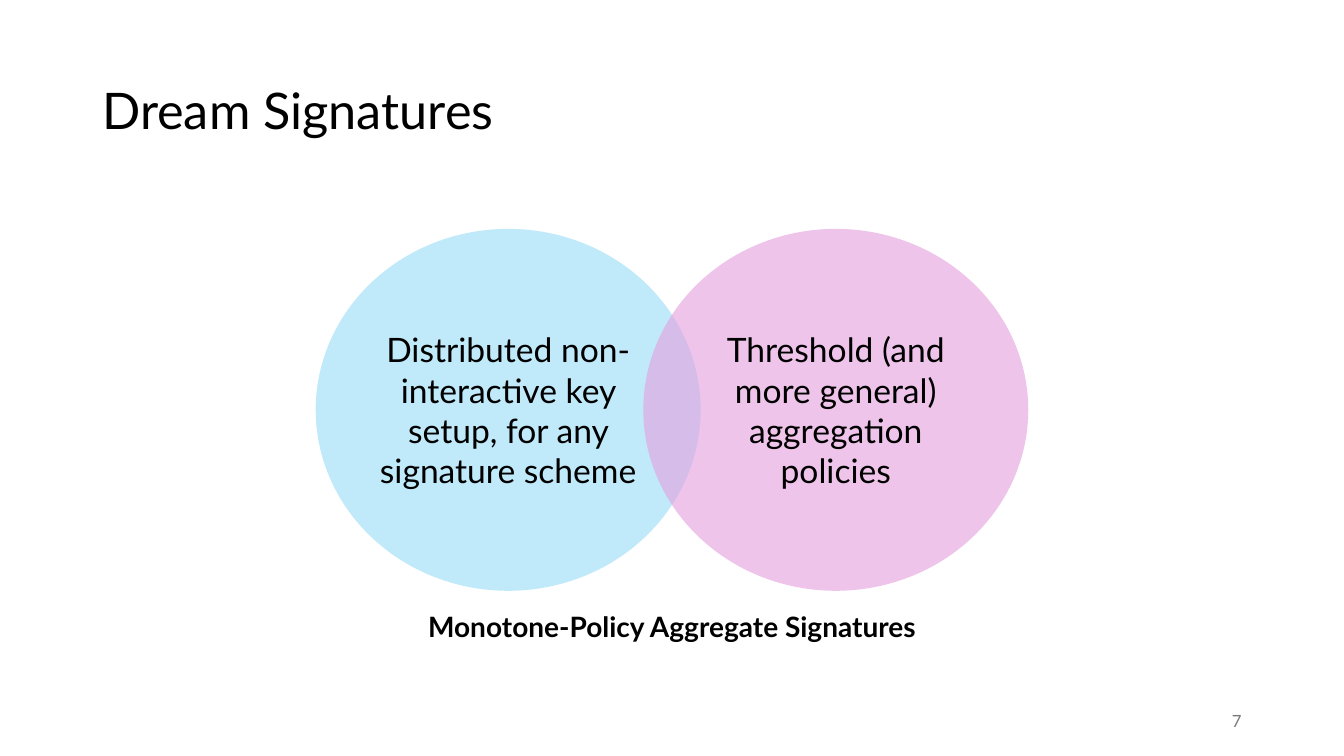
from lxml.etree import SubElement
from pptx import Presentation
from pptx.dml.color import RGBColor
from pptx.enum.shapes import MSO_SHAPE
from pptx.enum.text import MSO_ANCHOR, PP_ALIGN
from pptx.oxml.ns import qn
from pptx.util import Pt

FONT = "Lato"
BLACK = RGBColor(0x00, 0x00, 0x00)
GREY = RGBColor(0x79, 0x79, 0x79)
SKY = RGBColor(0x96, 0xDC, 0xF8)
ORCHID = RGBColor(0xE5, 0x9E, 0xDD)

CIRCLE_WIDTH = 275
PROPERTIES = [
    ("Distributed non-interactive key setup, for any signature scheme", SKY),
    ("Threshold (and more general) aggregation policies", ORCHID),
]


def write(frame, text, size, color=BLACK, align=PP_ALIGN.LEFT,
          anchor=MSO_ANCHOR.MIDDLE, bold=False):
    frame.word_wrap = True
    frame.vertical_anchor = anchor
    paragraph = frame.paragraphs[0]
    paragraph.alignment = align
    run = paragraph.add_run()
    run.text = text
    run.font.name = FONT
    run.font.size = Pt(size)
    run.font.bold = bold
    run.font.color.rgb = color
    return paragraph


def add_label(slide, box, text, size, **style):
    label = slide.shapes.add_textbox(*map(Pt, box))
    return write(label.text_frame, text, size, **style)


def add_title(slide, box, text):
    add_label(slide, box, text, 36).line_spacing = 0.9


def add_circle(slide, box, text, color):
    circle = slide.shapes.add_shape(MSO_SHAPE.OVAL, *map(Pt, box))
    circle.shadow.inherit = False
    circle.line.fill.background()
    circle.fill.solid()
    circle.fill.fore_color.rgb = color
    tint = circle.fill._xPr.find(qn("a:solidFill"))[0]
    SubElement(tint, qn("a:alpha"), val="60000")
    frame = circle.text_frame
    frame.margin_left = frame.margin_right = 0
    write(frame, text, 24, align=PP_ALIGN.CENTER)


def add_venn(slide, box):
    """Spread overlapping circles evenly from the left to the right edge."""
    left, top, width, height = box
    step = (width - CIRCLE_WIDTH) / (len(PROPERTIES) - 1)
    for index, (text, color) in enumerate(PROPERTIES):
        add_circle(slide, (left + index * step, top, CIRCLE_WIDTH, height),
                   text, color)


def main():
    presentation = Presentation()
    presentation.slide_width = Pt(960)
    presentation.slide_height = Pt(540)
    slide = presentation.slides.add_slide(presentation.slide_layouts[6])
    add_title(slide, (66, 28.75, 828, 104.4), "Dream Signatures")
    add_label(slide, (678, 500.5, 216, 28.75), "7", 12,
              color=GREY, align=PP_ALIGN.RIGHT)
    add_venn(slide, (225.5, 163.5, 509, 258.5))
    add_label(slide, (296.75, 432, 366.5, 31.5),
              "Monotone-Policy Aggregate Signatures", 20,
              align=PP_ALIGN.CENTER, anchor=MSO_ANCHOR.TOP, bold=True)
    presentation.save("out.pptx")


if __name__ == "__main__":
    main()
